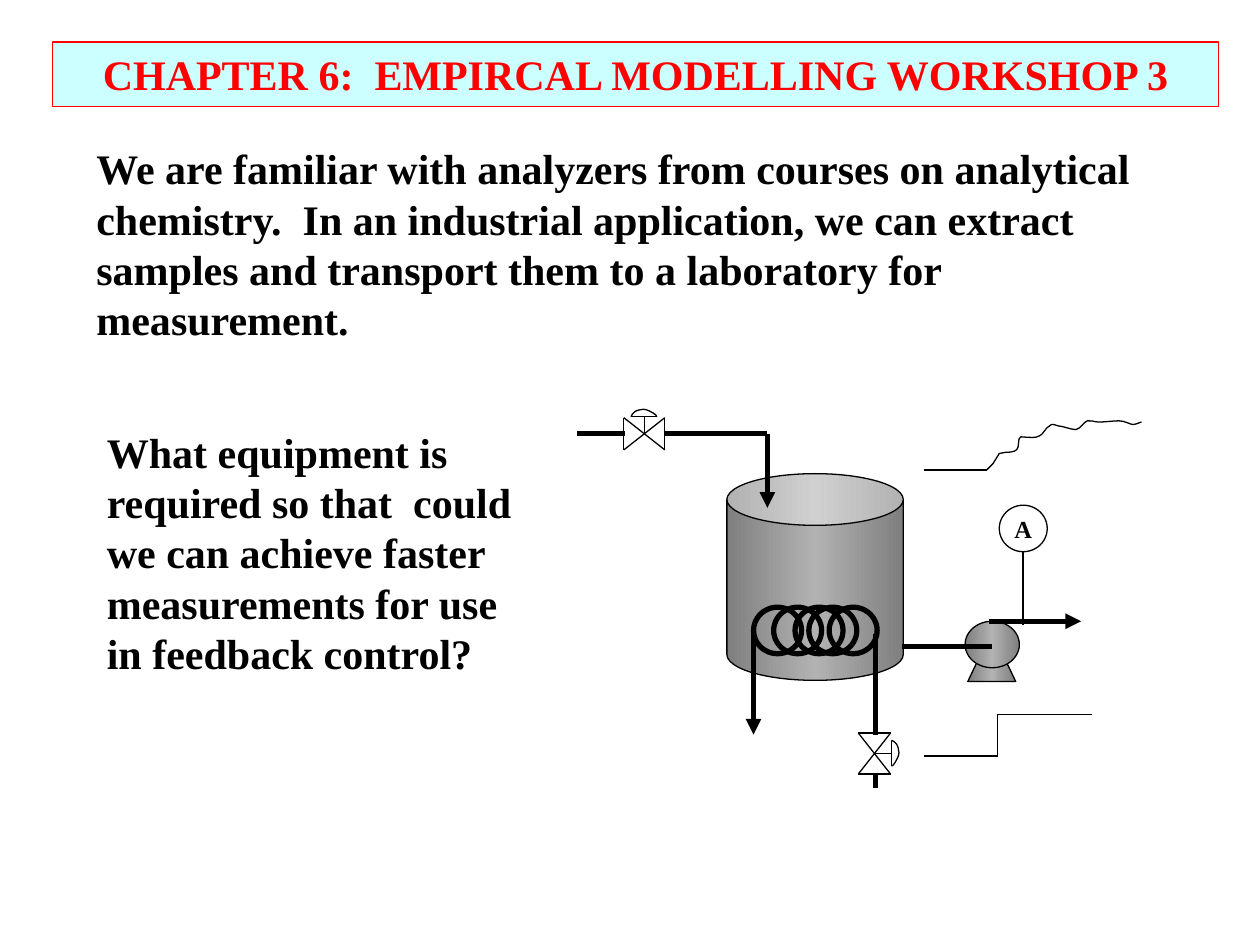
import copy

import pptx
import pptx.dml.color
import pptx.enum.shapes
import pptx.enum.text
import pptx.oxml
import pptx.oxml.ns
import pptx.util
from lxml import etree

Pt = pptx.util.Pt
SHAPE = pptx.enum.shapes.MSO_SHAPE
ALIGN = pptx.enum.text.PP_ALIGN
FONT = "Times New Roman"
COLORS = {"ink": "000000", "red": "FF0000", "banner": "CCFFFF",
          "steel_dark": "7F7F7F", "steel_light": "B2B2B2"}
THIN, PIPE = 0.75, 3
COIL_TOP, INSTRUMENT_SIZE = 347, (27.4, 26.6)

# Noisy outlet response: start point, then three points for each curve
RESPONSE = [
    (563.8, 268.6),
    (565.2, 267.1), (565.9, 266.4), (567.4, 265),
    (568.8, 262.8), (570.2, 260.6), (571, 259.2),
    (572.4, 258.5), (573.1, 259.2), (574.6, 258.5),
    (576, 258.5), (579.6, 258.5), (581, 257),
    (582.5, 255.6), (581.8, 251.3), (582.5, 250.6),
    (583.2, 249.1), (583.2, 249.8), (585.4, 249.8),
    (587.5, 249.8), (591.8, 250.6), (594, 249.1),
    (596.2, 248.4), (597.6, 244.1), (599.8, 243.4),
    (601.2, 241.9), (601.9, 242.6), (604.8, 243.4),
    (607, 243.4), (612, 245.5), (614.9, 245.5),
    (617.8, 244.8), (619.2, 241.2), (621.4, 240.5),
    (623.5, 239.8), (625, 241.2), (627.8, 241.2),
    (631.4, 241.2), (636.5, 240.5), (639.4, 240.5),
    (643, 240.5), (645.8, 242.6), (647.3, 242.6),
    (649.4, 242.6), (651.6, 241.2), (652.3, 241.2),
]
# Valve dome as (along the pipe, away from the pipe)
DOME = [(7.2, 9.7), (6.8, 10.4), (6.5, 11.2), (5, 11.9),
        (3.6, 12.6), (1.4, 14), (-0.4, 14),
        (-2.2, 14), (-4.3, 13.3), (-5.4, 12.6),
        (-6.5, 11.9), (-7.2, 10.8), (-7.6, 9.7)]


def rgb(name):
    return pptx.dml.color.RGBColor.from_string(COLORS[name])


def write(sp, text, size, color="ink", align=ALIGN.LEFT, wrap=True):
    tf = sp.text_frame
    tf.word_wrap = wrap
    p = tf.paragraphs[0]
    p.text = text
    p.alignment = align
    p.font.name, p.font.size, p.font.bold = FONT, Pt(size), True
    p.font.color.rgb = rgb(color)
    return tf


def add_text(s, box, text):
    sp = s.shapes.add_textbox(*map(Pt, box))
    write(sp, text, 24)


def add_shape(s, kind, box, line="ink", width=THIN, fill=None):
    sp = s.shapes.add_shape(kind, *map(Pt, box))
    sp.shadow.inherit = False
    sp.line.color.rgb = rgb(line)
    sp.line.width = Pt(width)
    if fill == "steel":
        fill_steel(sp)
    elif fill:
        sp.fill.solid()
        sp.fill.fore_color.rgb = rgb(fill)
    else:
        sp.fill.background()
    return sp


def fill_steel(sp):
    sp.fill.gradient()
    sp.fill.gradient_angle = 0
    stops = sp._element.spPr.find(".//" + pptx.oxml.ns.qn("a:gsLst"))
    stops.insert(1, copy.deepcopy(stops[0]))
    shades = ("steel_dark", "steel_light", "steel_dark")
    for i, (stop, shade) in enumerate(zip(sp.fill.gradient_stops, shades)):
        stop.position = i / 2
        stop.color.rgb = rgb(shade)


def add_line(s, start, end, width=THIN, arrow=False):
    cn = s.shapes.add_connector(pptx.enum.shapes.MSO_CONNECTOR.STRAIGHT,
                                *map(Pt, (*start, *end)))
    cn.line.color.rgb = rgb("ink")
    cn.line.width = Pt(width)
    if arrow:
        etree.SubElement(cn.line._get_or_add_ln(),
                         pptx.oxml.ns.qn("a:tailEnd"), type="triangle")
    etree.SubElement(cn._element.spPr, pptx.oxml.ns.qn("a:effectLst"))


def add_curve(s, points):
    pts = [(Pt(x), Pt(y)) for x, y in points]
    builder = s.shapes.build_freeform(*pts[0])
    builder.add_line_segments(pts[1:], close=False)
    sp = builder.convert_to_shape()
    sp.shadow.inherit = False
    sp.fill.background()
    sp.line.color.rgb = rgb("ink")
    sp.line.width = Pt(THIN)
    # Join every three straight segments into one Bezier curve
    outline = sp._element.xpath(".//a:path")[0]
    segments = outline.findall(pptx.oxml.ns.qn("a:lnTo"))
    for i in range(0, len(segments), 3):
        curve = etree.SubElement(outline, pptx.oxml.ns.qn("a:cubicBezTo"))
        for segment in segments[i:i + 3]:
            curve.append(segment[0])
            outline.remove(segment)


def add_valve(s, cx, cy, vertical=False):
    def at(along, out):
        return (cx + out, cy + along) if vertical else (cx + along, cy - out)

    length, half = 11.7, 9.2
    for side in (-length, length):
        add_line(s, at(side, -half), at(side, half))
    for out in (-half, half):
        add_line(s, at(-length, out), at(length, -out))
    # Stem, bar and dome of the actuator
    add_line(s, at(0, 0), at(0, 9.7))
    add_line(s, at(-7.2, 9.7), at(7.2, 9.7))
    add_curve(s, [at(*point) for point in DOME])


def add_equipment(s):
    # Tank and pump foot
    tank = add_shape(s, SHAPE.CAN, (415.4, 270.7, 100.8, 118.1), fill="steel")
    tank.adjustments[0] = 0.293
    foot = add_shape(s, SHAPE.FLOWCHART_MANUAL_OPERATION,
                     (553, 378, 27.4, 11.5), fill="steel")
    foot._element.spPr.xfrm.set("flipV", "1")

    # Heating coil
    for left in (430.6, 442.1, 454.3, 462.2, 473.8):
        add_shape(s, SHAPE.FLOWCHART_CONNECTOR,
                  (left, COIL_TOP, *INSTRUMENT_SIZE), width=PIPE)
    add_line(s, (430.6, 362.2), (430.6, 419.8), PIPE, arrow=True)
    add_line(s, (500.4, 362.2), (500.4, 419.8), PIPE)
    add_valve(s, 499.7, 430.6, vertical=True)
    add_line(s, (500.4, 442.1), (500.4, 450), PIPE)

    # Feed
    add_valve(s, 368.2, 247.9)
    add_line(s, (329.8, 247.9), (357.1, 247.9), PIPE)
    add_line(s, (380.2, 247.9), (438.5, 247.9), PIPE)
    add_line(s, (438.5, 247.9), (438.5, 290.2), PIPE, arrow=True)

    # Pump and outlet
    add_shape(s, SHAPE.OVAL, (551.5, 355, 31, 26.6), fill="steel")
    add_line(s, (566.6, 369.4), (515.5, 369.4), PIPE)
    add_line(s, (565.2, 355), (617.8, 355), PIPE, arrow=True)

    # Analyzer
    analyzer = add_shape(s, SHAPE.OVAL, (571, 288.7, *INSTRUMENT_SIZE))
    tf = write(analyzer, "A", 14, align=ALIGN.CENTER, wrap=False)
    tf.vertical_anchor = pptx.enum.text.MSO_ANCHOR.MIDDLE
    add_line(s, (584.6, 357.1), (584.6, 314.6))


def add_signals(s):
    # Step in the coolant valve
    step = [(527.8, 432), (570.2, 432), (570.2, 408.2), (624.2, 408.2)]
    for start, end in zip(step, step[1:]):
        add_line(s, start, end)
    # Response at the outlet
    add_line(s, (527.8, 268.6), RESPONSE[0])
    add_curve(s, RESPONSE)


def main():
    prs = pptx.Presentation()
    prs.slide_width, prs.slide_height = Pt(720), Pt(540)
    s = prs.slides.add_slide(prs.slide_layouts[6])

    # Title and text
    banner = add_shape(s, SHAPE.RECTANGLE, (30.2, 24, 666, 36.7),
                       line="red", fill="banner")
    write(banner, "CHAPTER 6:  EMPIRCAL MODELLING WORKSHOP 3", 24, "red",
          ALIGN.CENTER)
    add_text(s, (48, 78, 624, 122.4),
             "We are familiar with analyzers from courses on analytical "
             "chemistry.  In an industrial application, we can extract samples "
             "and transport them to a laboratory for measurement.")
    add_text(s, (54, 240, 246, 208.8),
             "What equipment is required so that  could we can achieve faster "
             "measurements for use in feedback control?")

    # Process drawing
    add_equipment(s)
    add_signals(s)
    prs.save("out.pptx")


if __name__ == "__main__":
    main()
